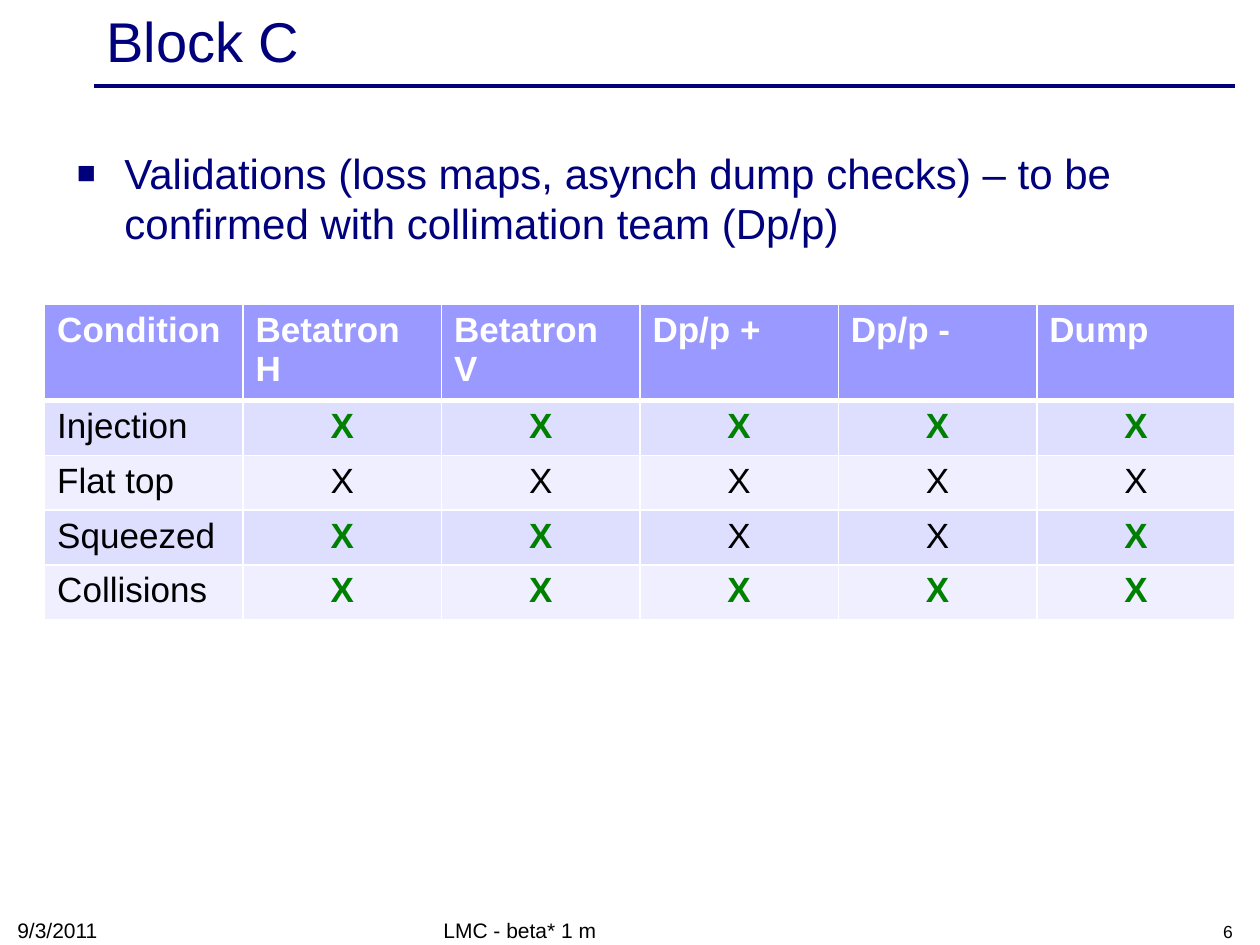
import lxml.etree
import pptx
import pptx.dml.color
import pptx.enum.shapes
import pptx.enum.text
import pptx.oxml
import pptx.oxml.ns
import pptx.util

Cm = pptx.util.Cm
Pt = pptx.util.Pt
RGBColor = pptx.dml.color.RGBColor
ALIGN = pptx.enum.text.PP_ALIGN
ANCHOR = pptx.enum.text.MSO_ANCHOR
qn = pptx.oxml.ns.qn

NAVY = RGBColor(0x00, 0x00, 0x7D)
BLACK = RGBColor(0x00, 0x00, 0x00)
WHITE = RGBColor(0xFF, 0xFF, 0xFF)
GREEN = RGBColor(0x00, 0x80, 0x00)
HEADER_FILL = RGBColor(0x99, 0x99, 0xFF)
BAND_FILLS = (RGBColor(0xDE, 0xDE, 0xFF), RGBColor(0xEF, 0xEF, 0xFF))

HEADERS = ("Condition", "Betatron H", "Betatron V", "Dp/p +", "Dp/p -", "Dump")
CONFIRMED = {
    "Injection": (True, True, True, True, True),
    "Flat top": (False, False, False, False, False),
    "Squeezed": (True, True, False, False, True),
    "Collisions": (True, True, True, True, True),
}


def add_run(p, text, size, color, bold=False):
    """Append one formatted run to a paragraph."""
    r = p.add_run()
    r.text = text
    r.font.name = "Arial"
    r.font.size = Pt(size)
    r.font.bold = bold
    r.font.color.rgb = color


def add_text(s, box, text, size, color, anchor=ANCHOR.BOTTOM, align=ALIGN.LEFT):
    """Add a wrapped text box with one paragraph and return its frame."""
    tf = s.shapes.add_textbox(*map(Cm, box)).text_frame
    tf.word_wrap = True
    tf.vertical_anchor = anchor
    p = tf.paragraphs[0]
    p.alignment = align
    add_run(p, text, size, color)
    return tf


def add_bullet(p, indent):
    """Give a paragraph a navy square bullet with a hanging indent."""
    pPr = p._p.get_or_add_pPr()
    pPr.set("marL", str(indent))
    pPr.set("indent", str(-indent))
    color = lxml.etree.SubElement(pPr, qn("a:buClr"))
    lxml.etree.SubElement(color, qn("a:srgbClr"), val=str(NAVY))
    lxml.etree.SubElement(pPr, qn("a:buSzPct"), val="75000")
    lxml.etree.SubElement(pPr, qn("a:buFont"), typeface="Arial")
    lxml.etree.SubElement(pPr, qn("a:buChar"), char="■")


def add_rule(s, left, right, y):
    """Draw the horizontal line under the title."""
    line = s.shapes.add_connector(
        pptx.enum.shapes.MSO_CONNECTOR.STRAIGHT, Cm(left), Cm(y), Cm(right), Cm(y))
    line.line.color.rgb = NAVY
    line.line.width = Pt(2)
    lxml.etree.SubElement(line._element.spPr, qn("a:effectLst"))


def set_borders(cell, bottom):
    """Set white cell borders, 1 pt except for the given bottom width."""
    tcPr = cell._tc.get_or_add_tcPr()
    for side, width in (("L", 1), ("R", 1), ("T", 1), ("B", bottom)):
        ln = lxml.etree.SubElement(tcPr, qn(f"a:ln{side}"), w=str(Pt(width)))
        fill = lxml.etree.SubElement(ln, qn("a:solidFill"))
        lxml.etree.SubElement(fill, qn("a:srgbClr"), val=str(WHITE))


def fill_cell(cell, text, fill, color, bold=False, align=ALIGN.LEFT, bottom=1):
    """Write and format one table cell."""
    set_borders(cell, bottom)
    cell.fill.solid()
    cell.fill.fore_color.rgb = fill
    p = cell.text_frame.paragraphs[0]
    p.alignment = align
    add_run(p, text, 20, color, bold)


def add_validation_table(s):
    """Add the table of validations by machine condition."""
    rows, cols = len(CONFIRMED) + 1, len(HEADERS)
    table = s.shapes.add_table(
        rows, cols, Cm(0.9), Cm(6.13), Cm(24), Cm(5.97)).table
    for col in table.columns:
        col.width = Cm(4)
    for i, row in enumerate(table.rows):
        row.height = Cm(1.04 if i else 1.81)
    for j, header in enumerate(HEADERS):
        fill_cell(table.cell(0, j), header, HEADER_FILL, WHITE, True, bottom=3)
    for i, (condition, marks) in enumerate(CONFIRMED.items(), 1):
        fill = BAND_FILLS[(i - 1) % 2]
        fill_cell(table.cell(i, 0), condition, fill, BLACK)
        for j, done in enumerate(marks, 1):
            fill_cell(table.cell(i, j), "X", fill, GREEN if done else BLACK,
                      done, ALIGN.CENTER)


def main():
    """Build and save the slide."""
    prs = pptx.Presentation()
    prs.slide_width, prs.slide_height = Cm(25.4), Cm(19.05)
    s = prs.slides.add_slide(prs.slide_layouts[6])
    add_rule(s, 1.9, 24.9, 1.73)
    add_text(s, (1.9, 0.08, 22.86, 1.45), "Block C", 32, NAVY, ANCHOR.MIDDLE)
    tf = add_text(
        s, (1.3, 2.72, 23.22, 3.6),
        "Validations (loss maps, asynch dump checks) – to be confirmed "
        "with collimation team (Dp/p)", 24, NAVY, ANCHOR.TOP)
    tf.margin_top = Cm(0.25)
    add_bullet(tf.paragraphs[0], Cm(0.96))
    add_text(s, (19.18, 18.42, 5.92, 0.7), "6", 10, BLACK, align=ALIGN.RIGHT)
    add_text(s, (8.69, 18.42, 8.05, 0.7), "LMC - beta* 1 m", 12, BLACK)
    add_text(s, (0.1, 18.4, 5.92, 0.73), "9/3/2011", 12, BLACK)
    add_validation_table(s)
    prs.save("out.pptx")


if __name__ == "__main__":
    main()
